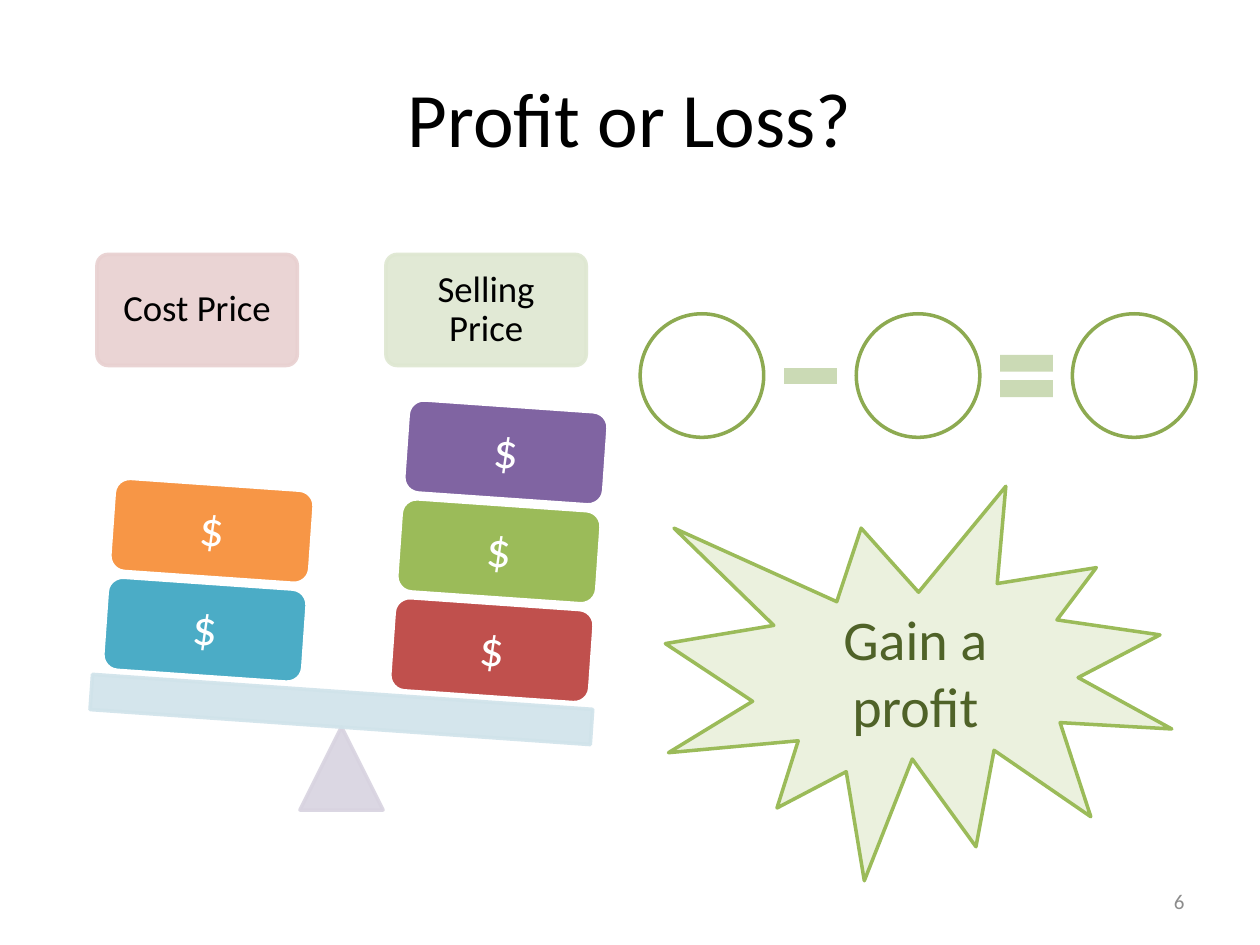
"""Build the "Profit or Loss?" slide with a balance, an equation and a burst."""
from dataclasses import dataclass
from typing import Optional

import lxml.etree
import pptx
import pptx.dml.color
import pptx.enum.shapes
import pptx.enum.text
import pptx.oxml.ns
import pptx.util

Pt = pptx.util.Pt
RGBColor = pptx.dml.color.RGBColor
SHAPE = pptx.enum.shapes.MSO_SHAPE
ALIGN = pptx.enum.text.PP_ALIGN
qn = pptx.oxml.ns.qn

BLACK = RGBColor(0x00, 0x00, 0x00)
WHITE = RGBColor(0xFF, 0xFF, 0xFF)
GREY = RGBColor(0x8C, 0x8C, 0x8C)
PINK = RGBColor(0xE8, 0xD0, 0xD0)
SAGE = RGBColor(0xDE, 0xE7, 0xD1)
LILAC = RGBColor(0xD8, 0xD3, 0xE0)
ICE = RGBColor(0xD0, 0xE3, 0xEA)
RED = RGBColor(0xC0, 0x50, 0x4D)
GREEN = RGBColor(0x9B, 0xBB, 0x59)
PURPLE = RGBColor(0x80, 0x64, 0xA2)
TEAL = RGBColor(0x4B, 0xAC, 0xC6)
ORANGE = RGBColor(0xF7, 0x96, 0x46)
RING = RGBColor(0x8D, 0xAA, 0x51)
OPERATOR = RGBColor(0xCB, 0xDA, 0xB5)
BURST = RGBColor(0xEB, 0xF1, 0xDE)
DARK_GREEN = RGBColor(0x4F, 0x62, 0x28)

TILT = 4


@dataclass(frozen=True)
class Area:
    left: float
    top: float
    width: float
    height: float

    def lengths(self) -> list:
        return [Pt(value) for value in (self.left, self.top, self.width, self.height)]


@dataclass(frozen=True)
class Label:
    text: str
    left: float
    fill: RGBColor


@dataclass(frozen=True)
class Stack:
    left: float
    top: float
    fills: tuple


LABELS = (Label("Cost Price", 55.4, PINK), Label("Selling Price", 220.5, SAGE))
STACKS = (
    Stack(223.9, 344.9, (RED, GREEN, PURPLE)),
    Stack(59.9, 333.2, (TEAL, ORANGE)),
)


def write(box, text: str, *, size: float, color: RGBColor, align=ALIGN.CENTER,
          spacing: float = 1.0, inset: Optional[float] = None) -> None:
    frame = box.text_frame
    frame.word_wrap = True
    frame.vertical_anchor = pptx.enum.text.MSO_ANCHOR.MIDDLE
    if inset is not None:
        frame.margin_left = frame.margin_right = Pt(inset)
        frame.margin_top = frame.margin_bottom = Pt(inset)
    para = frame.paragraphs[0]
    para.alignment = align
    para.line_spacing = spacing
    span = para.add_run()
    span.text = text
    span.font.name = "Calibri"
    span.font.size = Pt(size)
    span.font.color.rgb = color


def draw(page, kind, area: Area, fill: RGBColor, line: Optional[RGBColor] = None, *,
         rotation: float = 0, opacity: int = 100):
    shape = page.shapes.add_shape(kind, *area.lengths())
    shape.shadow.inherit = False
    shape.rotation = rotation
    shape.fill.solid()
    shape.fill.fore_color.rgb = fill
    if line is None:
        shape.line.fill.background()
    else:
        shape.line.color.rgb = line
        shape.line.width = Pt(2)
    if opacity < 100:
        for color in shape.element.spPr.iter(qn("a:srgbClr")):
            lxml.etree.SubElement(color, qn("a:alpha"), val=str(opacity * 1000))
    return shape


def draw_balance(page) -> None:
    for label in LABELS:
        box = draw(page, SHAPE.ROUNDED_RECTANGLE, Area(label.left, 145.4, 114.5, 63.5),
                   label.fill, label.fill, opacity=90)
        box.adjustments[0] = 0.1
        write(box, label.text, size=21, color=BLACK, spacing=0.9, inset=6.5)
    draw(page, SHAPE.ISOSCELES_TRIANGLE, Area(171.4, 415.4, 47.5, 47.5),
         LILAC, LILAC, opacity=90)
    draw(page, SHAPE.RECTANGLE, Area(51.8, 395.3, 286.6, 20.2),
         ICE, ICE, rotation=TILT, opacity=90)
    for stack in STACKS:
        for level, fill in enumerate(stack.fills):
            area = Area(stack.left + 4 * level, stack.top - 56.5 * level, 114.5, 53.3)
            box = draw(page, SHAPE.ROUNDED_RECTANGLE, area, fill, WHITE, rotation=TILT)
            write(box, "$", size=28, color=WHITE, spacing=0.9, inset=8.5)


def draw_equation(page) -> None:
    step = 123.5
    for index in range(3):
        draw(page, SHAPE.OVAL, Area(365.8 + step * index, 179.3, 70.6, 70.6), WHITE, RING)
    for index, kind in enumerate((SHAPE.MATH_MINUS, SHAPE.MATH_EQUAL)):
        draw(page, kind, Area(442.6 + step * index, 194.4, 41, 41), OPERATOR)


def main() -> None:
    deck = pptx.Presentation()
    deck.slide_width, deck.slide_height = Pt(720), Pt(540)
    page = deck.slides.add_slide(deck.slide_layouts[6])
    title = page.shapes.add_textbox(*Area(36, 21.6, 648, 90).lengths())
    write(title, "Profit or Loss?", size=44, color=BLACK)
    draw_balance(page)
    draw_equation(page)
    number = page.shapes.add_textbox(*Area(516, 500.5, 168, 28.8).lengths())
    write(number, "6", size=12, color=GREY, align=ALIGN.RIGHT)
    burst = draw(page, SHAPE.EXPLOSION1, Area(380.2, 277.9, 289.4, 225.4), BURST, GREEN)
    write(burst, "Gain a profit", size=32, color=DARK_GREEN)
    deck.save("out.pptx")


if __name__ == "__main__":
    main()
